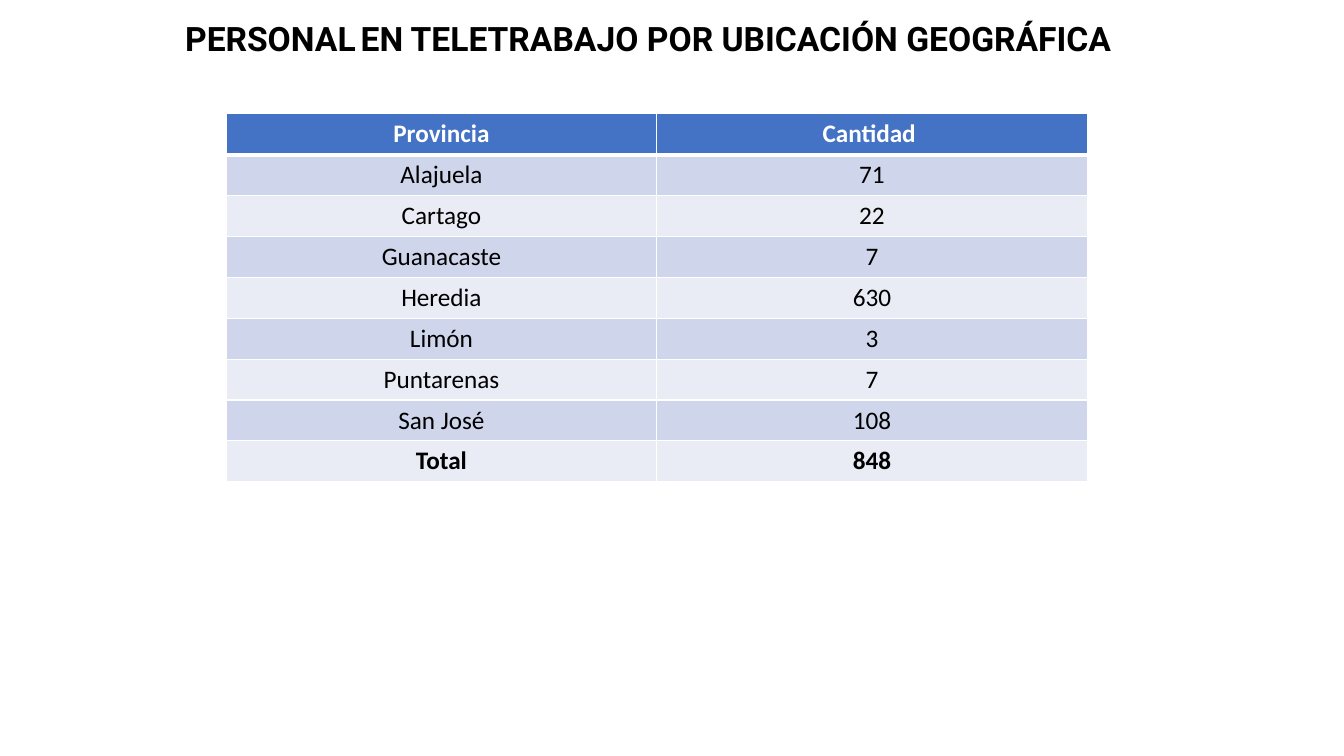
from lxml.etree import SubElement
from pptx import Presentation
from pptx.dml.color import RGBColor
from pptx.enum.text import MSO_ANCHOR, PP_ALIGN
from pptx.oxml.ns import qn
from pptx.util import Cm, Pt

theme = {
    "black": "000000", "white": "FFFFFF", "head": "4472C4",
    "bands": ("CFD5EA", "E9EBF5"),
    "title": 24, "gap": 14, "body": 18,
    "thin": 1, "thick": 3,
}


def style(run, size, face, color, bold):
    form = {"size": Pt(size), "name": face, "bold": bold}
    for key, value in form.items():
        setattr(run.font, key, value)
    run.font.color.rgb = RGBColor.from_string(color)


def border(cell, side, width):
    line = SubElement(cell._tc.get_or_add_tcPr(), qn(f"a:ln{side}"), w=str(Pt(width)))
    fill = SubElement(line, qn("a:solidFill"))
    SubElement(fill, qn("a:srgbClr"), val=theme["white"])


deck = Presentation()
deck.slide_width, deck.slide_height = Cm(33.87), Cm(19.05)
slide = deck.slides.add_slide(deck.slide_layouts[6])

frame = slide.shapes.add_textbox(Cm(1.73), Cm(0), Cm(29.21), Cm(2.06)).text_frame
for key, value in {"word_wrap": True, "vertical_anchor": MSO_ANCHOR.MIDDLE}.items():
    setattr(frame, key, value)
title = frame.paragraphs[0]
for key, value in {"alignment": PP_ALIGN.CENTER, "line_spacing": 0.9}.items():
    setattr(title, key, value)
for text, size in (
    ("PERSONAL", theme["title"]),
    (" ", theme["gap"]),
    ("EN TELETRABAJO POR UBICACIÓN GEOGRÁFICA", theme["title"]),
):
    run = title.add_run()
    run.text = text
    style(run, size, "Roboto", theme["black"], True)

counts = [
    ("Provincia", "Cantidad "),
    ("Alajuela", "71"),
    ("Cartago", "22"),
    ("Guanacaste", "7"),
    ("Heredia", "630"),
    ("Limón", "3"),
    ("Puntarenas", "7"),
    ("San José", "108"),
    ("Total", "848"),
]
last = len(counts) - 1
table = slide.shapes.add_table(
    len(counts), 2, Cm(5.7), Cm(2.87), Cm(21.7), Cm(1.03) * len(counts)
).table
for row, pair in enumerate(counts):
    head = row == 0
    fill = theme["head"] if head else theme["bands"][(row - 1) % 2]
    color = theme["white"] if head else theme["black"]
    for col, text in enumerate(pair):
        cell = table.cell(row, col)
        for side in "LRTB":
            thick = (head and side == "B") or (row == 1 and side == "T")
            border(cell, side, theme["thick" if thick else "thin"])
        cell.fill.solid()
        cell.fill.fore_color.rgb = RGBColor.from_string(fill)
        para = cell.text_frame.paragraphs[0]
        para.alignment = PP_ALIGN.CENTER
        run = para.add_run()
        run.text = text
        style(run, theme["body"], "Calibri", color, row in (0, last))

deck.save("out.pptx")
